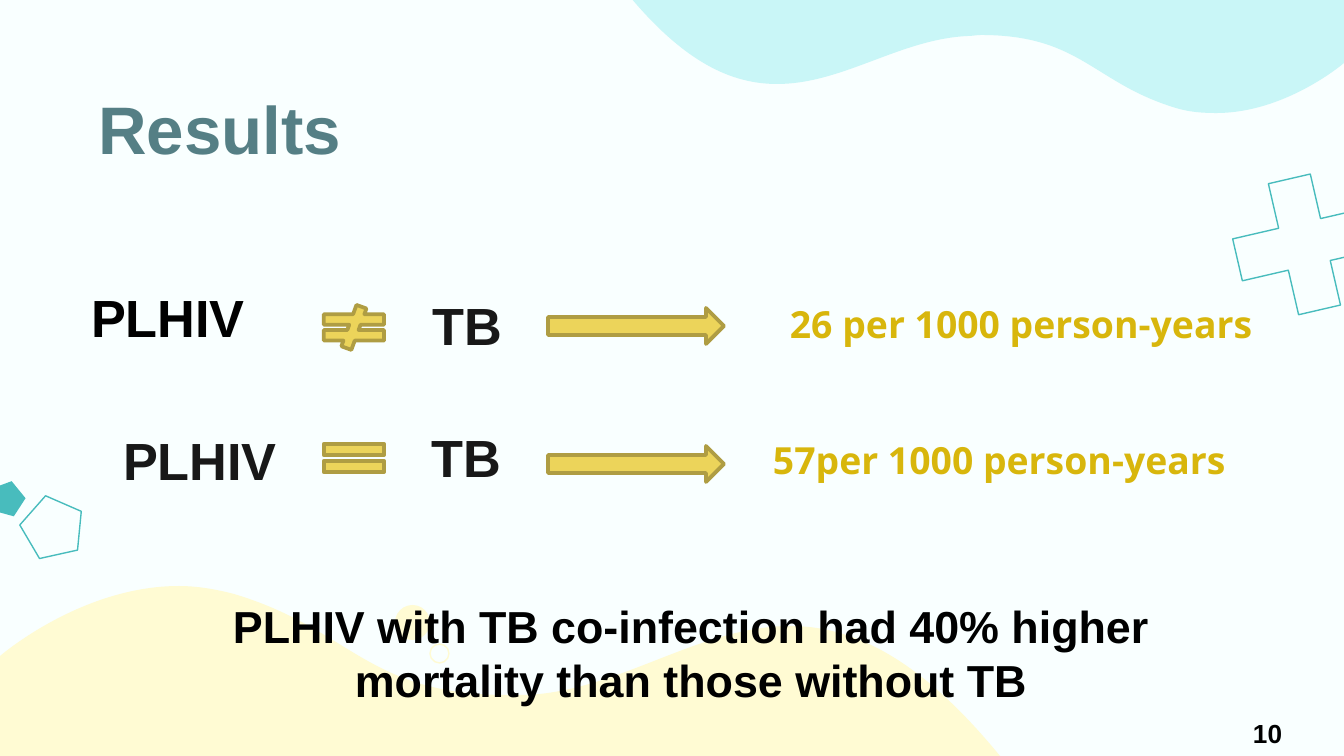
from pptx import Presentation
from pptx.dml.color import RGBColor
from pptx.enum.shapes import MSO_SHAPE
from pptx.enum.text import PP_ALIGN
from pptx.oxml.ns import qn

PLUS, OVAL, PENTAGON = MSO_SHAPE.MATH_PLUS, MSO_SHAPE.OVAL, MSO_SHAPE.REGULAR_PENTAGON
ARROW, EQUAL, NOT_EQUAL = MSO_SHAPE.RIGHT_ARROW, MSO_SHAPE.MATH_EQUAL, MSO_SHAPE.MATH_NOT_EQUAL
LEFT, CENTER, RIGHT = PP_ALIGN.LEFT, PP_ALIGN.CENTER, PP_ALIGN.RIGHT

EMU_PER_PX = 914400 / 134.4
EMU_PER_POINT = 12700

BACKGROUND, CREAM, AQUA, TEAL = "F9FFFF", "FFFBD3", "C9F6F7", "48BCBD"
SLATE, INK, BLACK = "557F85", "181818", "000000"
GOLD, YELLOW, OLIVE = "D8B60C", "ECD45A", "AF9D43"


def px(length):
    return round(length * EMU_PER_PX)


def color(hex_code):
    return RGBColor.from_string(hex_code)


class SlideBuilder:
    def __init__(self, page):
        self.page = page
        page.background.fill.solid()
        page.background.fill.fore_color.rgb = color(BACKGROUND)

    def paint(self, shape, fill=None, line=None, weight=0.75):
        shape.shadow.inherit = False
        if fill:
            shape.fill.solid()
            shape.fill.fore_color.rgb = color(fill)
        else:
            shape.fill.background()
        if line:
            shape.line.color.rgb = color(line)
            shape.line.width = round(weight * EMU_PER_POINT)
        else:
            shape.line.fill.background()

    def shape(self, kind, left, top, width, height, turn=0, **style):
        shape = self.page.shapes.add_shape(kind, *map(px, (left, top, width, height)))
        shape.rotation = turn
        self.paint(shape, **style)
        return shape

    def wave(self, start, segments, fill):
        """A segment of one point is a line, one of three points a curve."""
        outline = self.page.shapes.build_freeform(*map(px, start))
        corners = [(px(x), px(y)) for segment in segments for x, y in segment]
        outline.add_line_segments(corners, close=True)
        shape = outline.convert_to_shape()
        self.paint(shape, fill=fill)

        # Join each run of three lines that stands for a curve
        lines = iter(shape.element.findall(".//" + qn("a:lnTo")))
        for segment in segments:
            first, *others = [next(lines) for _ in segment]
            if others:
                first.tag = qn("a:cubicBezTo")
            for other in others:
                first.append(other[0])
                other.getparent().remove(other)

    def text(self, words, left, top, width, height, size, ink, font="Arial", align=LEFT):
        box = self.page.shapes.add_textbox(*map(px, (left, top, width, height)))
        frame = box.text_frame
        frame.word_wrap = True
        frame.margin_left = frame.margin_right = px(13)
        frame.margin_top = frame.margin_bottom = px(7)
        frame.text = words
        para = frame.paragraphs[0]
        para.alignment = align
        span = para.runs[0]
        span.font.name = font
        span.font.size = size * EMU_PER_POINT
        span.font.bold = True
        span.font.color.rgb = color(ink)


def main():
    deck = Presentation()
    deck.slide_width, deck.slide_height = px(1344), px(756)
    slide = SlideBuilder(deck.slides.add_slide(deck.slide_layouts[6]))

    # Waves
    slide.wave((179, 586), [
        [(81, 586), (0, 656), (0, 656)], [(0, 756)], [(1000, 756)],
        [(919, 657), (852, 626), (790, 626)], [(699, 626), (620, 691), (526, 695)],
        [(519, 695), (512, 695), (507, 695)], [(367, 695), (351, 629), (234, 594)],
        [(215, 589), (196, 586), (179, 586)]], CREAM)
    slide.wave((1216, 113), [
        [(1286, 113), (1344, 63), (1344, 63)], [(1344, -8)], [(626, -8)],
        [(684, 63), (732, 84), (777, 84)], [(843, 84), (900, 39), (968, 36)],
        [(972, 36), (977, 35), (981, 35)], [(1081, 35), (1093, 83), (1176, 108)],
        [(1189, 112), (1203, 113), (1216, 113)]], AQUA)

    # Small ornaments
    plus = slide.shape(PLUS, 1211, 153, 187, 183, turn=347, line=TEAL)
    plus.adjustments[0] = 0.235
    slide.shape(OVAL, 395, 605, 35, 35, fill=CREAM)
    slide.shape(OVAL, 430, 644, 19, 19, line=CREAM)
    slide.shape(PENTAGON, -12, 481, 35, 34, turn=303.1, fill=TEAL)
    slide.shape(PENTAGON, 20, 501, 63, 60, turn=203.5, line=TEAL)

    # Title
    slide.text("Results", 58, 80, 296, 83, 36, SLATE, align=RIGHT)

    # Comparison rows: group, sign, TB, arrow, rate
    symbol_style = dict(fill=YELLOW, line=OLIVE, weight=2)
    rows = [
        ((78, 278, BLACK), (NOT_EQUAL, 305, 45), (420, 286), 308,
         ("26 per 1000 person-years", 777, 294)),
        ((110, 421, INK), (EQUAL, 434, 48), (419, 418), 446,
         ("57per 1000 person-years", 760, 430)),
    ]
    for group, sign, disease, arrow_top, rate in rows:
        group_left, group_top, group_ink = group
        slide.text("PLHIV", group_left, group_top, 190, 76, 28, group_ink)
        kind, sign_top, sign_height = sign
        slide.shape(kind, 313, sign_top, 82, sign_height, **symbol_style)
        slide.text("TB", *disease, 113, 76, 28, INK)
        slide.shape(ARROW, 548, arrow_top, 176, 36, **symbol_style)
        words, rate_left, rate_top = rate
        slide.text(words, rate_left, rate_top, 530, 76, 20, GOLD, font="Open Sans")

    # Conclusion and page number
    slide.text("PLHIV with TB co-infection had 40% higher mortality than those without TB",
               168, 592, 1046, 122, 24, BLACK, align=CENTER)
    slide.text("10", 1240, 710, 73, 46, 14, BLACK)

    deck.save("out.pptx")


if __name__ == "__main__":
    main()
